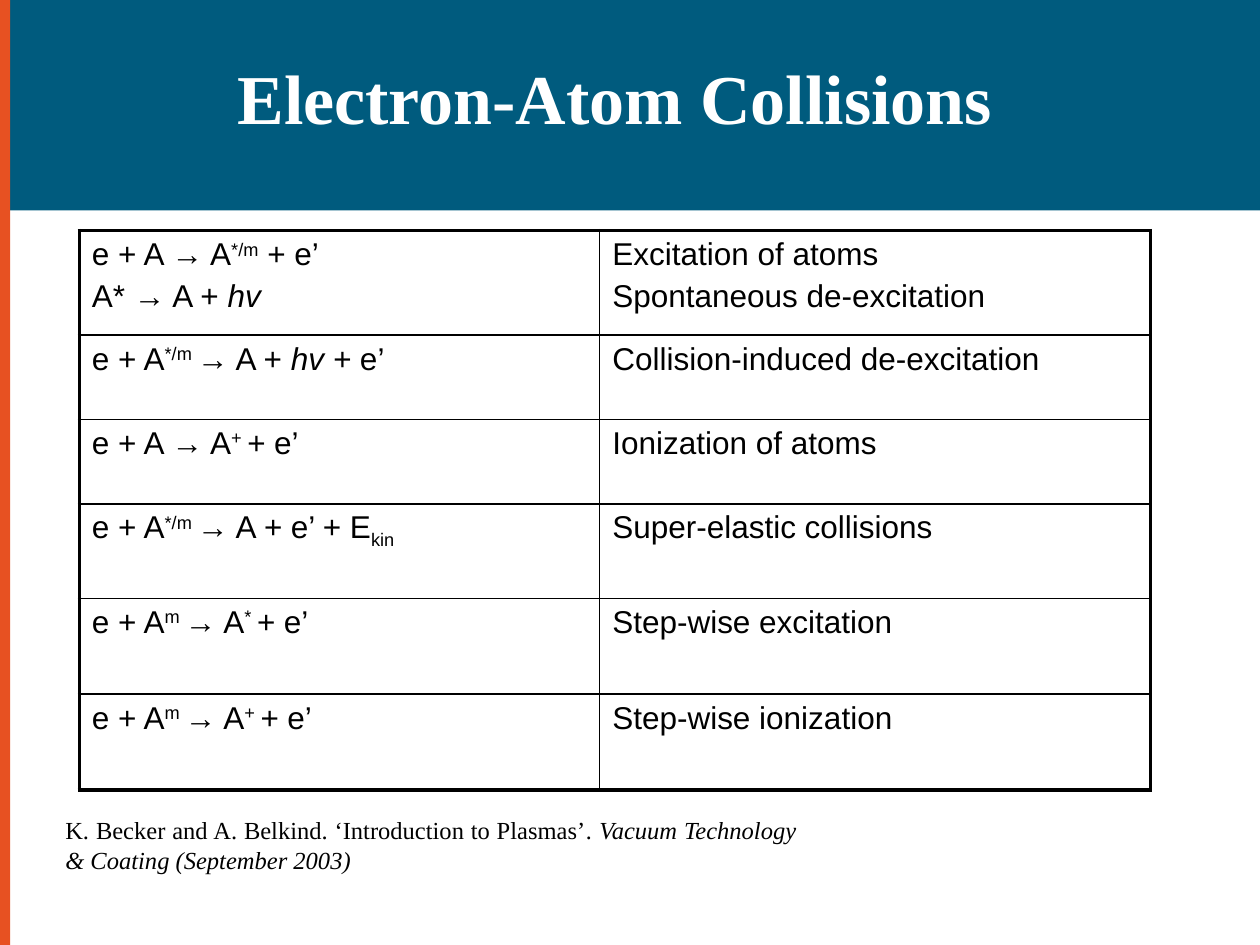
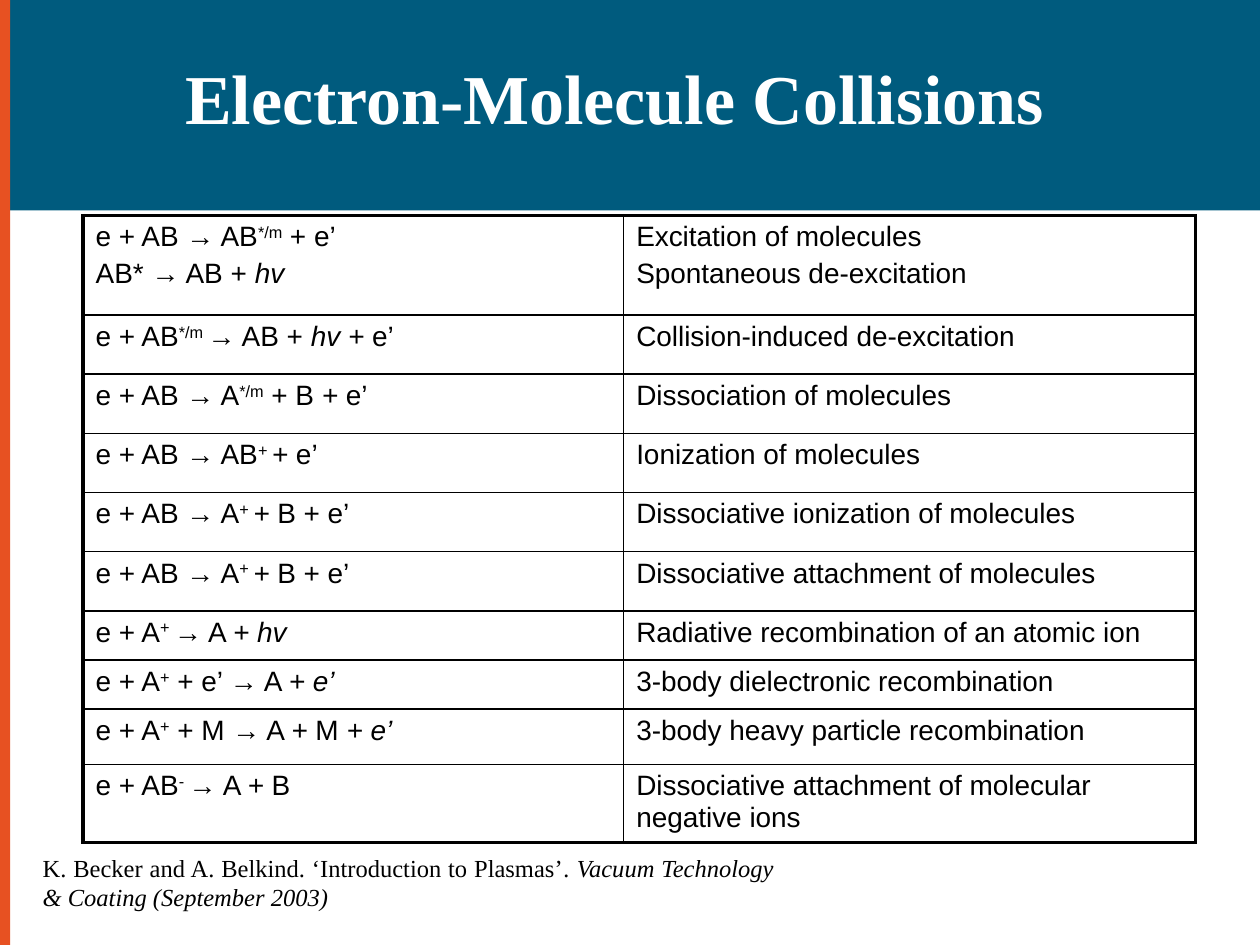
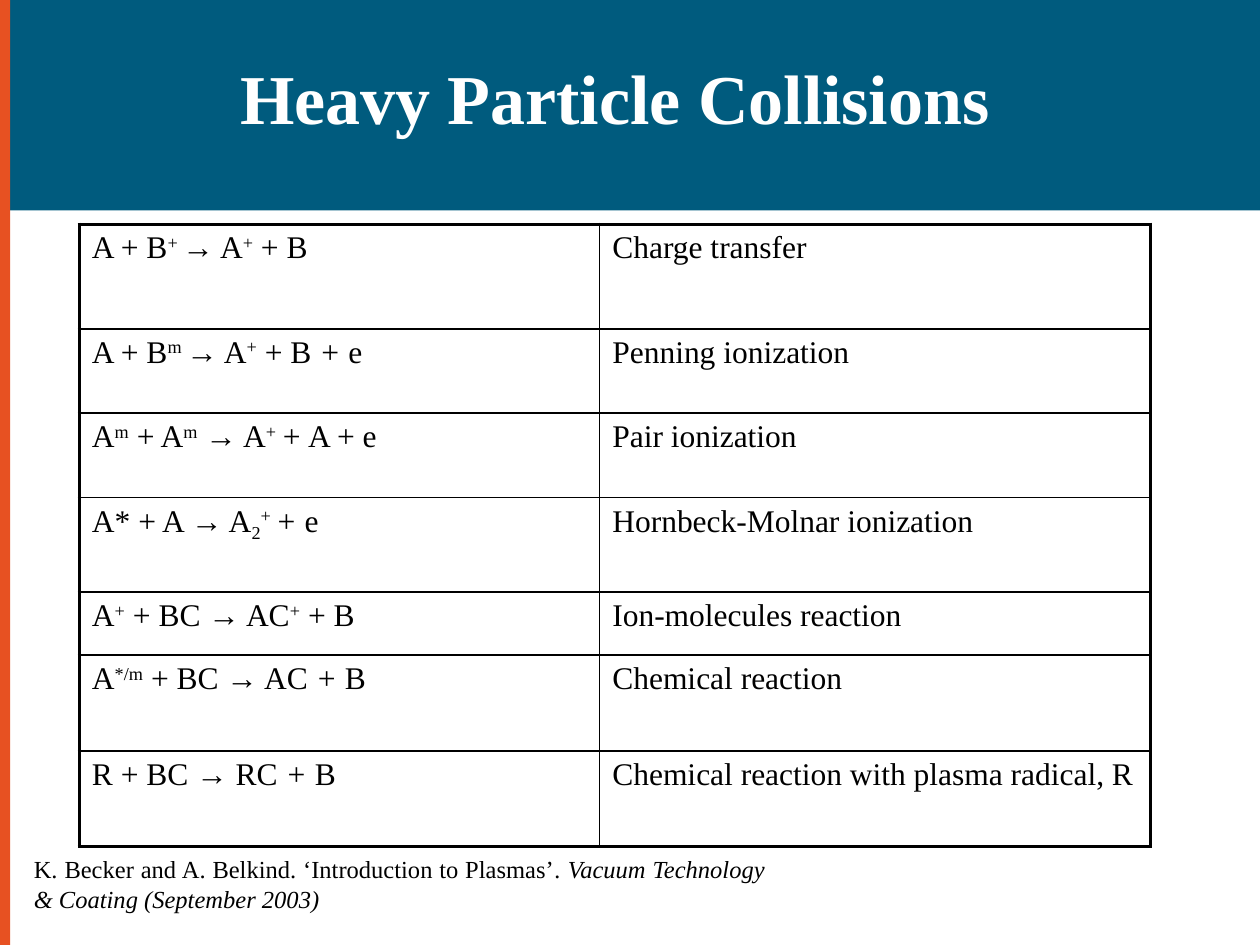
import itertools

import pptx
import pptx.dml.color
import pptx.enum.shapes
import pptx.enum.text
import pptx.oxml
import pptx.oxml.ns
import pptx.util

Inches = pptx.util.Inches
Pt = pptx.util.Pt
ALIGN = pptx.enum.text.PP_ALIGN
ANCHOR = pptx.enum.text.MSO_ANCHOR

COLORS = {"band": "005B7E", "stripe": "E75122", "title": "FFFFFF", "ink": "000000"}
SERIF = "Times New Roman"
SANS = "Arial"
CITATION = (
    "K. Becker and A. Belkind. ‘Introduction to Plasmas’"
    "~. Vacuum Technology & Coating (September 2003)~"
)
BASELINES = {"^": "30000", "_": "-25000"}
OUTER, INNER = 2.25, 1

ATOM_REACTIONS = [
    ("e + A → A^*/m^ + e’\nA* → A + ~hv~", "Excitation of atoms\nSpontaneous de-excitation", 0.83),
    ("e + A^*/m ^→ A + ~hv +~ e’", "Collision-induced de-excitation", 0.67),
    ("e + A → A^+ ^~+~ e’", "Ionization of atoms", 0.67),
    ("e + A^*/m ^→ A ~+~ e’ + E_kin_", "Super-elastic collisions", 0.75),
    ("e + A^m ^→ A^* ^~+~ e’", "Step-wise excitation", 0.76),
    ("e + A^m ^→ A^+ ^~+~ e’", "Step-wise ionization", 0.76),
]
MOLECULE_REACTIONS = [
    ("e + AB → AB^*/m^ + e’\nAB* → AB + ~hv~",
     "Excitation of molecules\nSpontaneous de-excitation", 0.79),
    ("e + AB^*/m ^→ AB + ~hv +~ e’", "Collision-induced de-excitation", 0.47),
    ("e + AB → A^*/m^ + B ~+~ e’", "Dissociation of molecules", 0.47),
    ("e + AB → AB^+ ^~+~ e’", "Ionization of molecules", 0.47),
    ("e + AB → A^+ ^~+~ B + e’", "Dissociative ionization of molecules", 0.47),
    ("e + AB → A^+ ^~+~ B + e’", "Dissociative attachment of molecules", 0.47),
    ("e + A^+ ^→ A ~+ hv~", "Radiative recombination of an atomic ion", 0.39),
    ("e + A^+^ + e’ → A ~+ e’~", "3-body dielectronic recombination", 0.39),
    ("e + A^+^ + M → A ~+ ~M ~+ e’~", "3-body heavy particle recombination", 0.44),
    ("e + AB^- ^→ A ~+~ B", "Dissociative attachment of molecular negative ions", 0.62),
]
HEAVY_REACTIONS = [
    ("A + B^+ ^→ A^+^ + B", "Charge transfer", 0.83),
    ("A + B^m ^→ A^+^ + B~ +~ e", "Penning ionization", 0.67),
    ("A^m^ + A^m^ → A^+ ^~+~ A + e", "Pair ionization", 0.67),
    ("A* + A → A_2_^+ ^~+~ e", "Hornbeck-Molnar ionization", 0.75),
    ("A^+^ + BC → AC^+^ + B", "Ion-molecules reaction", 0.5),
    ("A^*/m^ + BC → AC ~+~ B", "Chemical reaction", 0.76),
    ("R + BC → RC ~+~ B", "Chemical reaction with plasma radical, R", 0.76),
]


def rgb(name):
    return pptx.dml.color.RGBColor.from_string(COLORS[name])


def marked_runs(line):
    active = set()
    for is_mark, chars in itertools.groupby(line, key=lambda char: char in "^_~"):
        if is_mark:
            for mark in chars:
                active ^= {mark}
        else:
            yield "".join(chars), frozenset(active)


def write_text(frame, text, *, size, font=SERIF, color="ink", bold=False,
               align=ALIGN.LEFT, line_spacing=None):
    for number, line in enumerate(text.split("\n")):
        paragraph = frame.add_paragraph() if number else frame.paragraphs[0]
        paragraph.alignment = align
        paragraph.space_before = Pt(0.2 * size if number else 0)
        if line_spacing:
            paragraph.line_spacing = line_spacing
        for words, marks in marked_runs(line):
            run = paragraph.add_run()
            run.text = words
            run.font.size = Pt(size)
            run.font.name = font
            run.font.bold = bold
            run.font.italic = "~" in marks
            run.font.color.rgb = rgb(color)
            for mark in marks & BASELINES.keys():
                run.font._element.set("baseline", BASELINES[mark])


class Deck:
    def __init__(self):
        self.presentation = pptx.Presentation()
        self.presentation.slide_width = Inches(10)
        self.presentation.slide_height = Inches(7.5)
        self.layout = self.presentation.slide_layouts[5]
        for placeholder in list(self.layout.placeholders):
            if placeholder.placeholder_format.idx:
                placeholder.element.getparent().remove(placeholder.element)
        self.slide = None

    def add_slide(self, title):
        first = self.slide is None
        self.slide = self.presentation.slides.add_slide(self.layout)
        if first:
            self.add_layout_bands()
        heading = self.slide.shapes.title
        heading.left, heading.top = Inches(0.27), Inches(0.33)
        heading.width, heading.height = Inches(9.22), Inches(1.01)
        heading.text_frame.vertical_anchor = ANCHOR.MIDDLE
        write_text(heading.text_frame, title, size=40, color="title", bold=True,
                   align=ALIGN.CENTER, line_spacing=0.75)

    def add_layout_bands(self):
        bands = [self.add_band(10, 1.67, "band"), self.add_band(0.08, 7.5, "stripe")]
        for position, band in enumerate(bands, start=2):
            self.layout.shapes.element.insert(position, band.element)

    def add_band(self, width, height, color):
        band = self.slide.shapes.add_shape(
            pptx.enum.shapes.MSO_SHAPE.RECTANGLE, 0, 0, Inches(width), Inches(height))
        band.shadow.inherit = False
        band.fill.solid()
        band.fill.fore_color.rgb = rgb(color)
        band.line.fill.background()
        return band

    def add_reactions(self, reactions, left, top, columns, size, font):
        heights = [height for _, _, height in reactions]
        table = self.slide.shapes.add_table(
            len(reactions), len(columns), Inches(left), Inches(top),
            Inches(sum(columns)), Inches(sum(heights))).table
        table.first_row = table.horz_banding = False
        for column, width in zip(table.columns, columns):
            column.width = Inches(width)
        last = len(reactions) - 1
        for row, (formula, process, height) in enumerate(reactions):
            table.rows[row].height = Inches(height)
            for col, text in enumerate((formula, process)):
                cell = table.cell(row, col)
                write_text(cell.text_frame, text, size=size, font=font)
                self.add_borders(cell, L=col == 0, R=col == 1, T=row == 0, B=row == last)
                cell.fill.background()

    def add_borders(self, cell, **outer_sides):
        properties = cell._tc.get_or_add_tcPr()
        for side, is_outer in outer_sides.items():
            width = Pt(OUTER if is_outer else INNER)
            properties.append(pptx.oxml.parse_xml(
                f'<a:ln{side} {pptx.oxml.ns.nsdecls("a")} w="{width}"><a:solidFill>'
                f'<a:srgbClr val="{COLORS["ink"]}"/></a:solidFill></a:ln{side}>'))

    def add_citation(self, left, top):
        frame = self.slide.shapes.add_textbox(
            Inches(left), Inches(top), Inches(6), Inches(0.57)).text_frame
        frame.word_wrap = True
        frame.auto_size = pptx.enum.text.MSO_AUTO_SIZE.SHAPE_TO_FIT_TEXT
        write_text(frame, CITATION, size=14, align=ALIGN.JUSTIFY)


def main():
    deck = Deck()

    deck.add_slide("Electron-Atom Collisions")
    deck.add_reactions(ATOM_REACTIONS, 0.63, 1.83, (4.13, 4.37), 18, SANS)
    deck.add_citation(0.42, 6.42)

    deck.add_slide("Electron-Molecule Collisions")
    deck.add_reactions(MOLECULE_REACTIONS, 0.66, 1.71, (4.29, 4.54), 16, SANS)
    deck.add_citation(0.24, 6.72)

    deck.add_slide("Heavy Particle Collisions")
    deck.add_reactions(HEAVY_REACTIONS, 0.63, 1.78, (4.13, 4.37), 18, SERIF)
    deck.add_citation(0.17, 6.73)

    deck.presentation.save("out.pptx")


if __name__ == "__main__":
    main()
